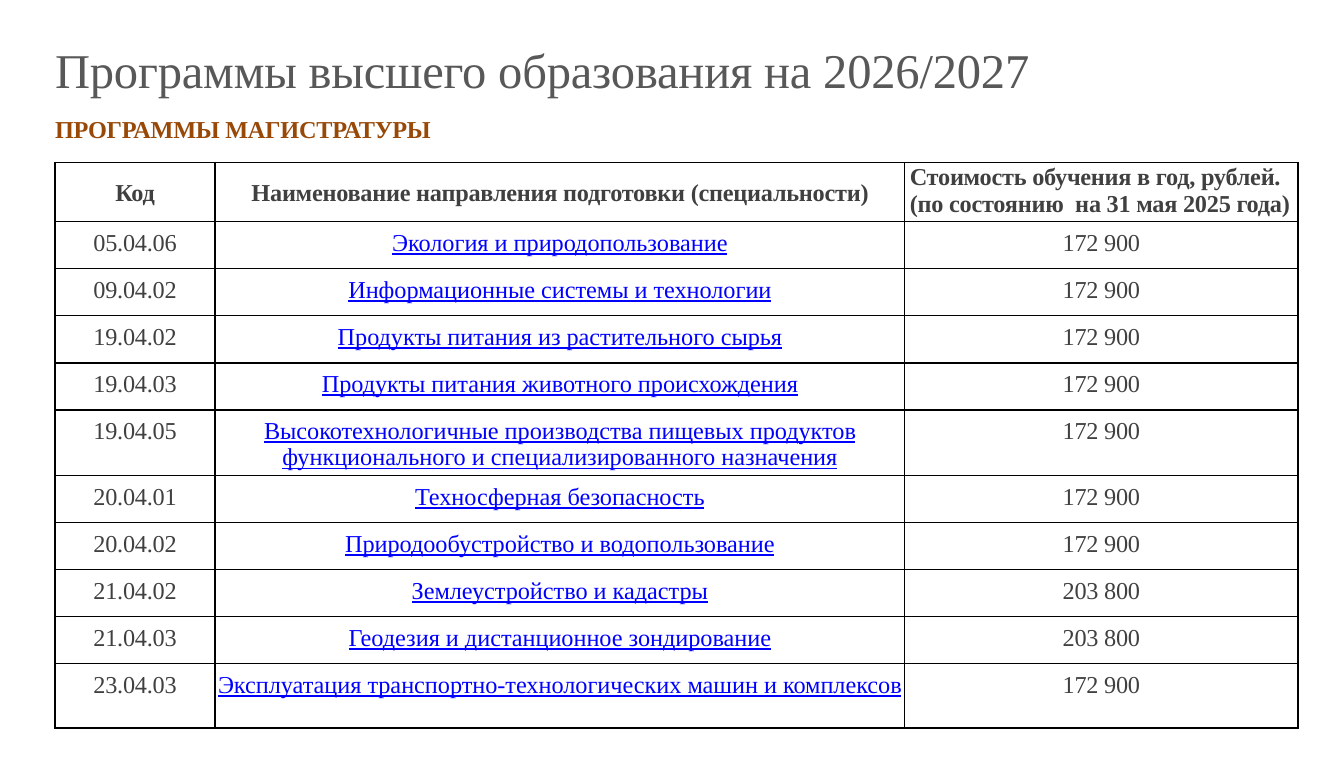
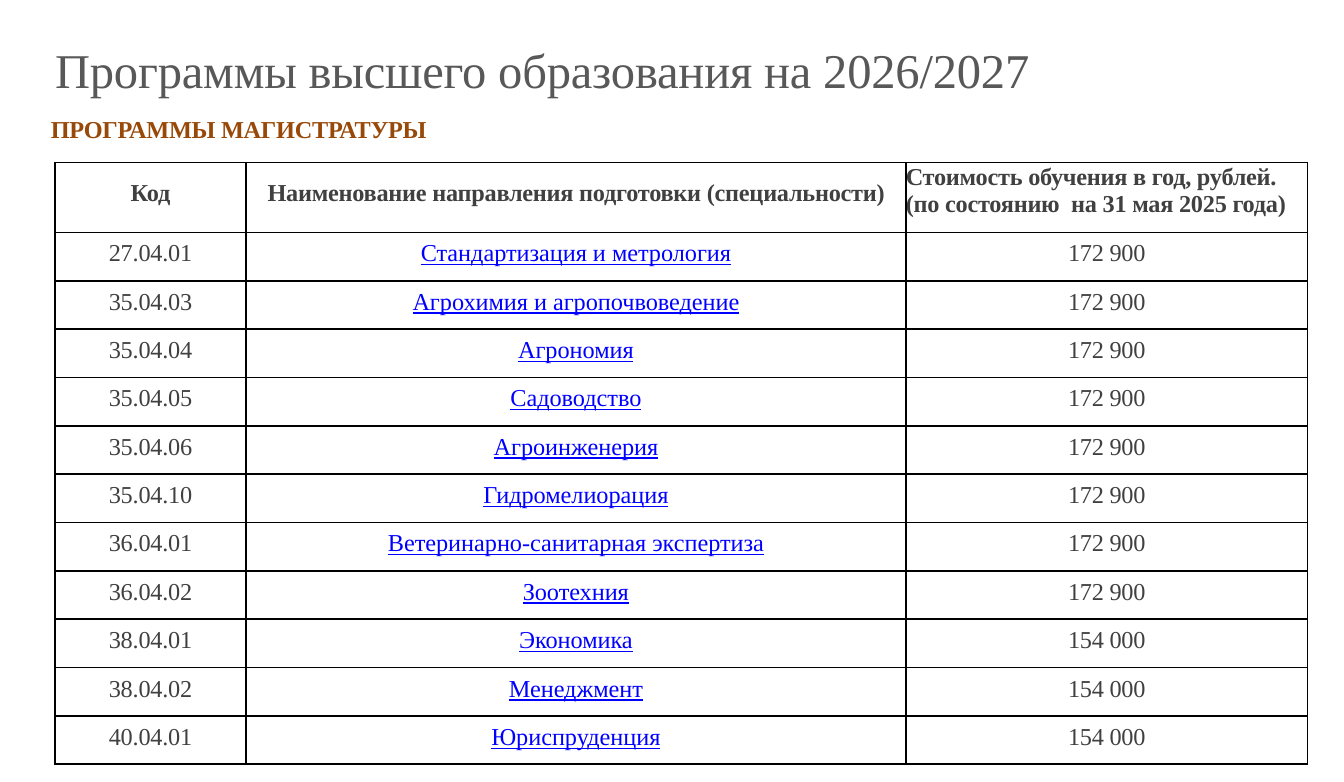
from dataclasses import dataclass

from lxml import etree
from pptx import Presentation
from pptx.dml.color import RGBColor
from pptx.enum.text import MSO_ANCHOR, PP_ALIGN
from pptx.oxml.ns import qn
from pptx.util import Inches, Pt

LEFT, CENTER = PP_ALIGN.LEFT, PP_ALIGN.CENTER
TOP = MSO_ANCHOR.TOP

FONT = "Times New Roman"
TITLE_GRAY = RGBColor(0x58, 0x58, 0x58)
TEXT_GRAY = RGBColor(0x40, 0x40, 0x40)
LINK_BLUE = RGBColor(0x00, 0x00, 0xFF)
HEADING_BROWN = RGBColor(0x98, 0x48, 0x07)
BORDER_HEX = "000000"

TITLE = "Программы высшего образования на 2026/2027"
HEADING = "ПРОГРАММЫ МАГИСТРАТУРЫ"
HEADER = (
    "Код",
    "Наименование направления подготовки (специальности)",
    "Стоимость обучения в год, рублей.\n(по состоянию  на 31 мая 2025 года)",
)
TITLE_ONLY = 5


@dataclass(frozen=True)
class Style:
    color: RGBColor
    size: float = 13
    bold: bool = False
    underline: bool = False
    align: PP_ALIGN = CENTER
    before: float = 4.4
    spacing: int = -10


TITLE_STYLE = Style(TITLE_GRAY, size=26, align=LEFT, before=1.1)
HEADING_STYLE = Style(HEADING_BROWN, bold=True, align=LEFT, before=1)
HEADER_STYLE = Style(TEXT_GRAY, bold=True, before=9.5)
COST_HEADER_STYLE = Style(TEXT_GRAY, bold=True, align=LEFT, before=0.5)
BODY_STYLE = Style(TEXT_GRAY)
LINK_STYLE = Style(LINK_BLUE, underline=True, spacing=0)


@dataclass(frozen=True)
class Box:
    left: float
    top: float
    width: float
    height: float


TITLE_BOX = Box(0.41, 0.29, 8.85, 0.46)


@dataclass(frozen=True)
class Program:
    code: str
    name: str
    cost: str = "172 900"
    height: float | None = None


@dataclass(frozen=True)
class ProgramSlide:
    heading: Box
    heading_inset: tuple[float, float]
    columns: tuple[float, float, float]
    header_height: float
    row_height: float
    cost_inset: float
    programs: tuple[Program, ...]


SLIDES = (
    ProgramSlide(
        Box(0.41, 0.84, 3.62, 0.33), (0, 0.01),
        (1.19, 5.13, 2.93), 0.44, 0.35, 0.04,
        (
            Program("05.04.06", "Экология и природопользование"),
            Program("09.04.02", "Информационные системы и технологии"),
            Program("19.04.02", "Продукты питания из растительного сырья"),
            Program("19.04.03", "Продукты питания животного происхождения"),
            Program("19.04.05", "Высокотехнологичные производства пищевых продуктов "
                    "функционального и специализированного назначения", height=0.49),
            Program("20.04.01", "Техносферная безопасность"),
            Program("20.04.02", "Природообустройство и водопользование"),
            Program("21.04.02", "Землеустройство и кадастры", "203 800"),
            Program("21.04.03", "Геодезия и дистанционное зондирование", "203 800"),
            Program("23.04.03", "Эксплуатация транспортно-технологических машин и комплексов",
                    height=0.48),
        ),
    ),
    ProgramSlide(
        Box(0.28, 0.8, 7.13, 0.32), (0.1, 0.05),
        (1.42, 4.91, 2.99), 0.52, 0.36, 0,
        (
            Program("27.04.01", "Стандартизация и метрология"),
            Program("35.04.03", "Агрохимия и агропочвоведение"),
            Program("35.04.04", "Агрономия"),
            Program("35.04.05", "Садоводство"),
            Program("35.04.06", "Агроинженерия"),
            Program("35.04.10", "Гидромелиорация"),
            Program("36.04.01", "Ветеринарно-санитарная экспертиза"),
            Program("36.04.02", "Зоотехния"),
            Program("38.04.01", "Экономика", "154 000"),
            Program("38.04.02", "Менеджмент", "154 000"),
            Program("40.04.01", "Юриспруденция", "154 000"),
        ),
    ),
)


def write(tf, text: str, style: Style) -> None:
    tf.text = text
    for p in tf.paragraphs:
        p.alignment = style.align
        p.space_before = Pt(style.before)
        p.font.name = FONT
        p.font.size = Pt(style.size)
        p.font.bold = style.bold
        p.font.underline = style.underline
        p.font.color.rgb = style.color
        p._p.pPr.find(qn("a:defRPr")).set("spc", str(style.spacing))


def set_insets(target, left: float, top: float) -> None:
    target.margin_left = target.margin_right = Inches(left)
    target.margin_top = Inches(top)
    target.margin_bottom = 0
    target.vertical_anchor = TOP


def place(sp, box: Box) -> None:
    sp.left, sp.top = Inches(box.left), Inches(box.top)
    sp.width, sp.height = Inches(box.width), Inches(box.height)


def add_title(s) -> None:
    sp = s.shapes.title
    place(sp, TITLE_BOX)
    set_insets(sp.text_frame, 0, 0.01)
    write(sp.text_frame, TITLE, TITLE_STYLE)


def add_heading(s, box: Box, inset: tuple[float, float]) -> None:
    sp = s.shapes.add_textbox(0, 0, 0, 0)
    place(sp, box)
    tf = sp.text_frame
    tf.word_wrap = True
    set_insets(tf, *inset)
    write(tf, HEADING, HEADING_STYLE)


def add_borders(cell) -> None:
    tc_pr = cell._tc.get_or_add_tcPr()
    for side in ("a:lnL", "a:lnR", "a:lnT", "a:lnB"):
        line = etree.SubElement(tc_pr, qn(side), w=str(Pt(1)))
        fill = etree.SubElement(line, qn("a:solidFill"))
        etree.SubElement(fill, qn("a:srgbClr"), val=BORDER_HEX)


def fill_cell(cell, text: str, style: Style, left: float, top: float) -> None:
    set_insets(cell, left, top)
    cell.margin_right = 0
    add_borders(cell)
    cell.fill.background()
    write(cell.text_frame, text, style)


def add_programs(s, page: ProgramSlide) -> None:
    heights = [page.header_height] + [p.height or page.row_height for p in page.programs]
    table = s.shapes.add_table(
        len(heights), len(page.columns), Inches(0.41), Inches(1.21),
        Inches(sum(page.columns)), Inches(sum(heights)),
    ).table
    table.first_row = table.horz_banding = False
    for column, width in zip(table.columns, page.columns):
        column.width = Inches(width)
    for row, height in zip(table.rows, heights):
        row.height = Inches(height)

    header_styles = (HEADER_STYLE, HEADER_STYLE, COST_HEADER_STYLE)
    header_insets = ((0, 0.13), (0, 0.13), (page.cost_inset, 0.01))
    for c, (text, style, inset) in enumerate(zip(HEADER, header_styles, header_insets)):
        fill_cell(table.cell(0, c), text, style, *inset)

    body_styles = (BODY_STYLE, LINK_STYLE, BODY_STYLE)
    for r, program in enumerate(page.programs, start=1):
        texts = (program.code, program.name, program.cost)
        for c, (text, style) in enumerate(zip(texts, body_styles)):
            fill_cell(table.cell(r, c), text, style, 0, 0.06)


def main() -> None:
    prs = Presentation()
    prs.slide_width, prs.slide_height = Inches(10), Inches(5.82)
    for page in SLIDES:
        s = prs.slides.add_slide(prs.slide_layouts[TITLE_ONLY])
        add_title(s)
        add_programs(s, page)
        add_heading(s, page.heading, page.heading_inset)
    prs.save("out.pptx")


if __name__ == "__main__":
    main()
